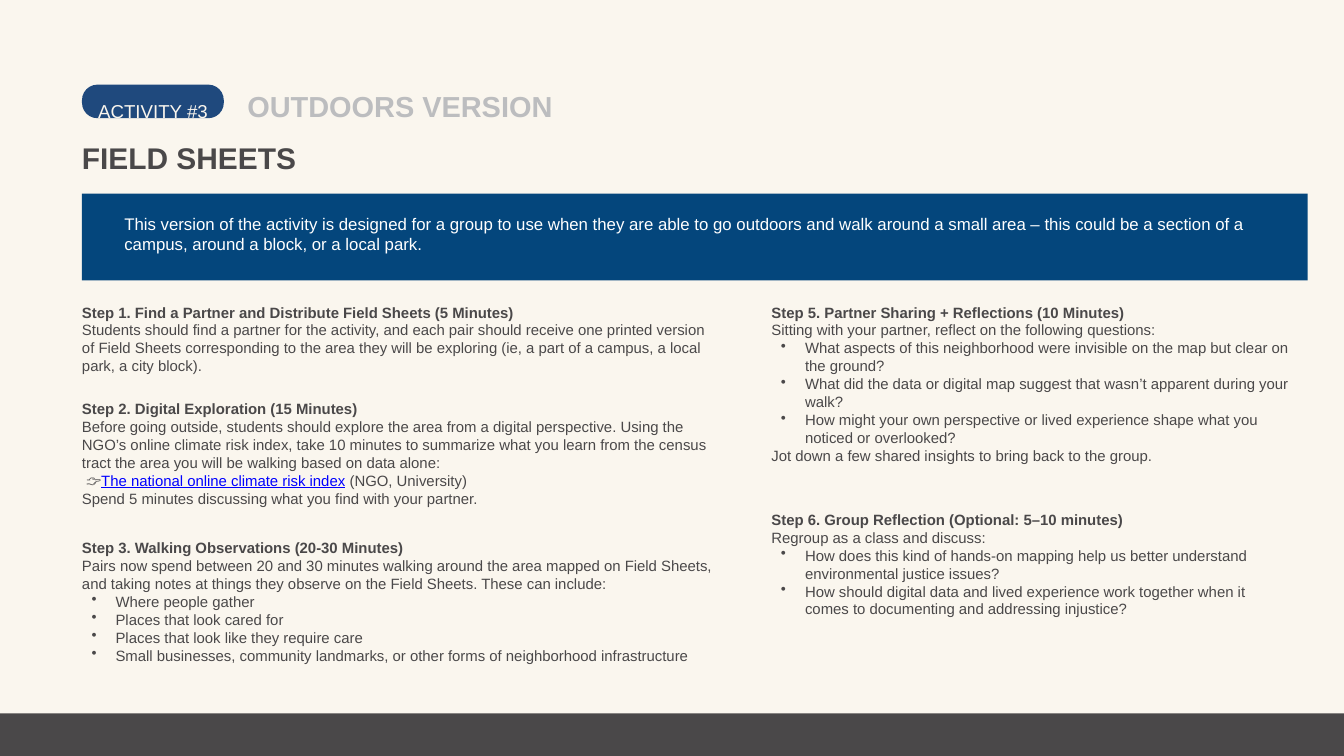
import dataclasses

import lxml.etree
import pptx
import pptx.dml.color
import pptx.enum.shapes
import pptx.enum.text
import pptx.oxml.ns
import pptx.util

Cm = pptx.util.Cm
SHAPES = pptx.enum.shapes.MSO_SHAPE


@dataclasses.dataclass(frozen=True)
class Theme:
    """Colours, font and type sizes of the slide."""
    paper: str = "FAF6EE"
    ink: str = "4A4849"
    banner: str = "04467C"
    badge: str = "1F497D"
    muted: str = "BCBDBF"
    white: str = "FFFFFF"
    link: str = "0000FF"
    font: str = "Arial"
    title: int = 32
    version: int = 31
    label: int = 20
    intro: int = 18
    body: int = 16


THEME = Theme()
WIDTH, HEIGHT = 50.8, 28.58
LEFT, RIGHT = 3.1, 29.16
LEFT_WIDTH, RIGHT_WIDTH = 24.08, 19.66

LEFT_STEPS = [
    (11.46, 2.74, "Step 1. Find a Partner and Distribute Field Sheets (5 Minutes)", [
        ("text", "Students should find a partner for the activity, and each pair should receive one printed "
                 "version of Field Sheets corresponding to the area they will be exploring (ie, a part of a "
                 "campus, a local park, a city block)."),
    ]),
    (15.11, 4.11, "Step 2. Digital Exploration (15 Minutes)", [
        ("text", "Before going outside, students should explore the area from a digital perspective. Using the "
                 "NGO’s online climate risk index, take 10 minutes to summarize what you learn from the "
                 "census tract the area you will be walking based on data alone:"),
        ("link", (" 👉", "The national online climate risk index", " (NGO, University)")),
        ("text", "Spend 5 minutes discussing what you find with your partner."),
    ]),
    (20.37, 4.8, "Step 3. Walking Observations (20-30 Minutes)", [
        ("text", "Pairs now spend between 20 and 30 minutes walking around the area mapped on Field Sheets, "
                 "and taking notes at things they observe on the Field Sheets. These can include:"),
        ("bullet", "Where people gather"),
        ("bullet", "Places that look cared for"),
        ("bullet", "Places that look like they require care"),
        ("bullet", "Small businesses, community landmarks, or other forms of neighborhood infrastructure"),
    ]),
]
RIGHT_STEPS = [
    (11.46, 6.15, "Step 5. Partner Sharing + Reflections (10 Minutes)", [
        ("text", "Sitting with your partner, reflect on the following questions:"),
        ("bullet", "What aspects of this neighborhood were invisible on the map but clear on the ground?"),
        ("bullet", "What did the data or digital map suggest that wasn’t apparent during your walk?"),
        ("bullet", "How might your own perspective or lived experience shape what you noticed or overlooked?"),
        ("text", "Jot down a few shared insights to bring back to the group."),
    ]),
    (19.3, 4.11, "Step 6. Group Reflection (Optional: 5–10 minutes)", [
        ("text", "Regroup as a class and discuss:"),
        ("bullet", "How does this kind of hands-on mapping help us better understand environmental justice "
                   "issues?"),
        ("bullet", "How should digital data and lived experience work together when it comes to documenting "
                   "and addressing injustice?"),
    ]),
]


def rgb(color):
    """Turn a hex string into a colour."""
    return pptx.dml.color.RGBColor.from_string(color)


def add_text(p, text, size=THEME.body, color=THEME.ink, bold=False, underline=False):
    """Append a formatted run to a paragraph."""
    r = p.add_run()
    r.text = text
    r.font.name = THEME.font
    r.font.size = pptx.util.Pt(size)
    r.font.bold = bold
    r.font.underline = underline
    r.font.color.rgb = rgb(color)


def add_panel(slide, kind, box, color):
    """Draw a flat filled shape."""
    sp = slide.shapes.add_shape(kind, *map(Cm, box))
    sp.shadow.inherit = False
    sp.fill.solid()
    sp.fill.fore_color.rgb = rgb(color)
    sp.line.fill.background()
    return sp


def add_frame(slide, box):
    """Add a wrapping text box without insets and return its text frame."""
    tf = slide.shapes.add_textbox(*map(Cm, box)).text_frame
    tf.word_wrap = True
    tf.auto_size = pptx.enum.text.MSO_AUTO_SIZE.SHAPE_TO_FIT_TEXT
    tf.margin_left = tf.margin_top = tf.margin_right = tf.margin_bottom = 0
    return tf


def add_line(slide, box, text, spacing=None, **fmt):
    """Add a text box holding one paragraph."""
    p = add_frame(slide, box).paragraphs[0]
    p.line_spacing = spacing
    add_text(p, text, **fmt)


def set_bullet(p):
    """Give a paragraph a hanging round bullet."""
    p.level = 1
    pPr = p._p.get_or_add_pPr()
    pPr.set("marL", str(Cm(1.27)))
    pPr.set("indent", str(Cm(-0.91)))
    qn = pptx.oxml.ns.qn
    color = lxml.etree.SubElement(pPr, qn("a:buClr"))
    lxml.etree.SubElement(color, qn("a:srgbClr"), val=THEME.ink)
    lxml.etree.SubElement(pPr, qn("a:buChar"), char="•")


def add_header(slide, left, top):
    """Place the activity badge, version name and title."""
    badge = add_panel(slide, SHAPES.ROUNDED_RECTANGLE, (left, top, 5.36, 1.27), THEME.badge)
    badge.adjustments[0] = 0.46
    add_line(slide, (left + 0.61, top + 0.23, 23.7, 0.86), "ACTIVITY #3",
             spacing=1.4, size=THEME.label, color=THEME.paper)
    add_line(slide, (left + 6.25, top + 0.03, 11.81, 1.32), "OUTDOORS VERSION",
             spacing=1.1, size=THEME.version, color=THEME.muted, bold=True)
    add_line(slide, (left, top + 2.08, 11.81, 1.37), "FIELD SHEETS", size=THEME.title, bold=True)


def add_banner(slide, left, top, width, height):
    """Place the introduction on its blue band."""
    add_panel(slide, SHAPES.RECTANGLE, (left, top, width, height), THEME.banner)
    add_line(slide, (left + 1.6, top + 0.76, width - 3.2, 1.55),
             "This version of the activity is designed for a group to use when they are able to go outdoors "
             "and walk around a small area – this could be a section of a campus, around a block, or a "
             "local park.", size=THEME.intro, color=THEME.white)


def add_steps(slide, left, width, steps):
    """Place a column of activity steps."""
    for top, height, heading, items in steps:
        tf = add_frame(slide, (left, top, width, height))
        add_text(tf.paragraphs[0], heading, bold=True)
        for kind, content in items:
            p = tf.add_paragraph()
            if kind == "link":
                pointer, name, source = content
                add_text(p, pointer)
                add_text(p, name, color=THEME.link, underline=True)
                add_text(p, source)
                continue
            if kind == "bullet":
                set_bullet(p)
            add_text(p, content)


def main():
    """Build and save the slide."""
    prs = pptx.Presentation()
    prs.slide_width, prs.slide_height = Cm(WIDTH), Cm(HEIGHT)
    slide = prs.slides.add_slide(prs.slide_layouts[6])
    slide.background.fill.solid()
    slide.background.fill.fore_color.rgb = rgb(THEME.paper)
    add_panel(slide, SHAPES.RECTANGLE, (0, 26.97, WIDTH, HEIGHT - 26.97), THEME.ink)
    add_header(slide, LEFT, 3.2)
    add_banner(slide, LEFT, 7.32, 46.33, 3.28)
    add_steps(slide, LEFT, LEFT_WIDTH, LEFT_STEPS)
    add_steps(slide, RIGHT, RIGHT_WIDTH, RIGHT_STEPS)
    prs.save("out.pptx")


if __name__ == "__main__":
    main()
